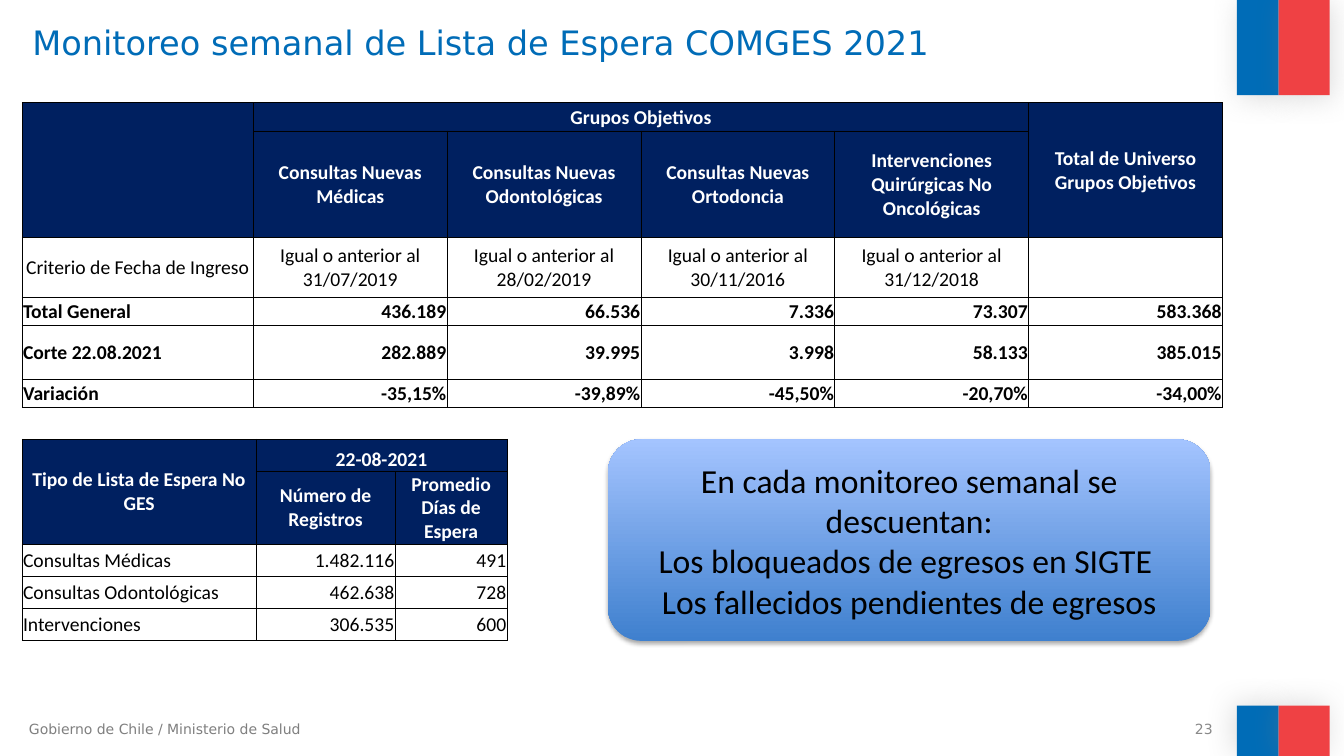
from lxml import etree
from pptx import Presentation
from pptx.dml.color import RGBColor
from pptx.enum.shapes import MSO_SHAPE
from pptx.enum.text import MSO_ANCHOR, MSO_AUTO_SIZE, PP_ALIGN
from pptx.oxml.ns import qn
from pptx.util import Cm, Pt

RECT, ROUNDED = MSO_SHAPE.RECTANGLE, MSO_SHAPE.ROUNDED_RECTANGLE
TOP, MIDDLE, BOTTOM = MSO_ANCHOR.TOP, MSO_ANCHOR.MIDDLE, MSO_ANCHOR.BOTTOM
LEFT, CENTER, RIGHT = PP_ALIGN.LEFT, PP_ALIGN.CENTER, PP_ALIGN.RIGHT
NO_FIT = MSO_AUTO_SIZE.NONE

BLUE = RGBColor(0x00, 0x6C, 0xB7)
RED = RGBColor(0xEF, 0x41, 0x44)
NAVY = RGBColor(0x00, 0x20, 0x60)
DEEP_BLUE = RGBColor(0x3F, 0x80, 0xCE)
LIGHT_BLUE = RGBColor(0xA4, 0xC4, 0xFF)
WHITE = RGBColor(0xFF, 0xFF, 0xFF)
BLACK = RGBColor(0x00, 0x00, 0x00)
GRAY = RGBColor(0x80, 0x80, 0x80)
FOOTER_GRAY = RGBColor(0x7F, 0x7F, 0x7F)
NUMBER_GRAY = RGBColor(0x89, 0x89, 0x89)

GOALS = [
    ["", "Grupos Objetivos", "", "", "", "Total de Universo Grupos Objetivos"],
    ["", "Consultas Nuevas Médicas", "Consultas Nuevas Odontológicas",
     "Consultas Nuevas Ortodoncia", "Intervenciones Quirúrgicas No Oncológicas", ""],
    ["Criterio de Fecha de Ingreso", "Igual o anterior al 31/07/2019",
     "Igual o anterior al 28/02/2019", "Igual o anterior al 30/11/2016",
     "Igual o anterior al 31/12/2018", ""],
    ["Total General", "436.189", "66.536", "7.336", "73.307", "583.368"],
    ["Corte 22.08.2021", "282.889", "39.995", "3.998", "58.133", "385.015"],
    ["Variación", "-35,15%", "-39,89%", "-45,50%", "-20,70%", "-34,00%"],
]
WAITING = [
    ["Tipo de Lista de Espera No GES", "22-08-2021", ""],
    ["", "Número de Registros", "Promedio Días de Espera"],
    ["Consultas Médicas", "1.482.116", "491"],
    ["Consultas Odontológicas", "462.638", "728"],
    ["Intervenciones", "306.535", "600"],
]
RULES = [
    "En cada monitoreo semanal se descuentan:",
    "Los bloqueados de egresos en SIGTE ",
    "Los fallecidos pendientes de egresos",
]


def put_text(tf, *lines, size=14, font="Calibri", color=BLACK, bold=False,
             align=LEFT, anchor=MIDDLE):
    """Fill a text frame with one paragraph per line."""
    tf.word_wrap = True
    tf.vertical_anchor = anchor
    for i, line in enumerate(lines):
        p = tf.add_paragraph() if i else tf.paragraphs[0]
        p.alignment = align
        r = p.add_run()
        r.text = line
        r.font.size, r.font.name, r.font.bold = Pt(size), font, bold
        r.font.color.rgb = color


def add_shadow(sp, color, alpha, blur, dist, angle):
    """Give a shape an outer shadow."""
    sp.shadow.inherit = False
    effects = sp._element.spPr.find(qn("a:effectLst"))
    shadow = etree.SubElement(effects, qn("a:outerShdw"), blurRad=str(Pt(blur)),
                              dist=str(Pt(dist)), dir=str(angle * 60000),
                              algn="ctr", rotWithShape="0")
    tint = etree.SubElement(shadow, qn("a:srgbClr"), val=str(color))
    etree.SubElement(tint, qn("a:alpha"), val=str(alpha * 1000))


def add_borders(cell):
    """Draw a thin black line on all four sides of a cell."""
    tcPr = cell._tc.get_or_add_tcPr()
    for side in ("lnL", "lnR", "lnT", "lnB"):
        ln = etree.SubElement(tcPr, qn(f"a:{side}"), w=str(Pt(0.5)))
        fill = etree.SubElement(ln, qn("a:solidFill"))
        etree.SubElement(fill, qn("a:srgbClr"), val=str(BLACK))


def flag(s, left, top, width, height, angle):
    """Place a blue and a red band side by side."""
    split = int(width * 0.45)
    for x, w, color in ((left, split, BLUE), (left + split, width - split, RED)):
        sp = s.shapes.add_shape(RECT, x, top, w, height)
        sp.fill.solid()
        sp.fill.fore_color.rgb = color
        sp.line.fill.background()
        add_shadow(sp, GRAY, 25, 20, 3, angle)


def title(s, left, top, width, height, text):
    """Move and format the title placeholder."""
    sp = s.shapes.title
    sp.left, sp.top, sp.width, sp.height = left, top, width, height
    sp.text_frame.auto_size = NO_FIT
    put_text(sp.text_frame, text, size=24, font="DejaVu Sans", color=BLUE, anchor=TOP)


def footer(s, left, top, width, height, text, number):
    """Place the institution on the left and the slide number on the right."""
    half = width // 2
    for x, line, color, align in ((left, text, FOOTER_GRAY, LEFT),
                                  (left + half, number, NUMBER_GRAY, RIGHT)):
        tb = s.shapes.add_textbox(x, top, half, height)
        put_text(tb.text_frame, line, size=10, font="DejaVu Sans", color=color, align=align)


def data_table(s, left, top, width, heights, weights, rows, merges,
               centered_rows=(), bold_rows=()):
    """Place a bordered table with two navy header rows."""
    frame = s.shapes.add_table(len(rows), len(weights), left, top, width, sum(heights))
    table = frame.table
    table.first_row = table.horz_banding = False
    for column, weight in zip(table.columns, weights):
        column.width = int(width * weight / sum(weights))
    for i, (row, height) in enumerate(zip(rows, heights)):
        table.rows[i].height = height
        header = i < 2
        for j, text in enumerate(row):
            cell = table.cell(i, j)
            cell.margin_left = cell.margin_right = cell.margin_top = Cm(0.02)
            cell.margin_bottom = 0
            cell.vertical_anchor = MIDDLE
            add_borders(cell)
            if header:
                cell.fill.solid()
                cell.fill.fore_color.rgb = NAVY
            else:
                cell.fill.background()
            align = CENTER if header or i in centered_rows else RIGHT if j else LEFT
            put_text(cell.text_frame, text, color=WHITE if header else BLACK,
                     bold=header or i in bold_rows, align=align)
    for first, last in merges:
        table.cell(*first).merge(table.cell(*last))
    return table


def callout(s, left, top, width, height, lines):
    """Place the rounded gradient box with the discount rules."""
    sp = s.shapes.add_shape(ROUNDED, left, top, width, height)
    sp.fill.gradient()
    sp.fill.gradient_angle = 90
    for stop, color in zip(sp.fill.gradient_stops, (DEEP_BLUE, LIGHT_BLUE)):
        stop.color.rgb = color
    sp.line.fill.background()
    add_shadow(sp, BLACK, 35, 3.1, 1.8, 90)
    put_text(sp.text_frame, *lines, size=24, align=CENTER)


def main():
    """Build and save the slide."""
    prs = Presentation()
    prs.slide_width, prs.slide_height = Cm(33.87), Cm(19.05)
    s = prs.slides.add_slide(prs.slide_layouts[5])
    margin, width = Cm(0.56), Cm(30.25)

    flag(s, Cm(31.17), 0, Cm(2.34), Cm(2.4), 45)
    flag(s, Cm(31.17), Cm(17.78), Cm(2.34), Cm(1.27), 215)
    title(s, margin, Cm(0.43), width, Cm(1.98),
          "Monitoreo semanal de Lista de Espera COMGES 2021")
    footer(s, Cm(0.48), Cm(18.04), Cm(30.33), Cm(0.68),
           "Gobierno de Chile / Ministerio de Salud", "23")
    data_table(s, margin, Cm(2.59), width,
               [Cm(h) for h in (0.71, 2.69, 1.49, 0.71, 1.37, 0.71)],
               [2.29] + [1.92] * 5, GOALS,
               [((0, 0), (1, 0)), ((0, 1), (0, 4)), ((0, 5), (1, 5))],
               centered_rows=(2,), bold_rows=(3, 4, 5))
    waiting = data_table(s, margin, Cm(11.07), Cm(12.22),
                         [Cm(h) for h in (0.81, 1.83, 0.81, 0.81, 0.81)],
                         [2.32, 1.38, 1.11], WAITING,
                         [((0, 0), (1, 0)), ((0, 1), (0, 2))])
    waiting.cell(0, 1).vertical_anchor = BOTTOM
    callout(s, Cm(15.32), Cm(11.07), Cm(15.19), Cm(5.08), RULES)
    prs.save("out.pptx")


if __name__ == "__main__":
    main()
